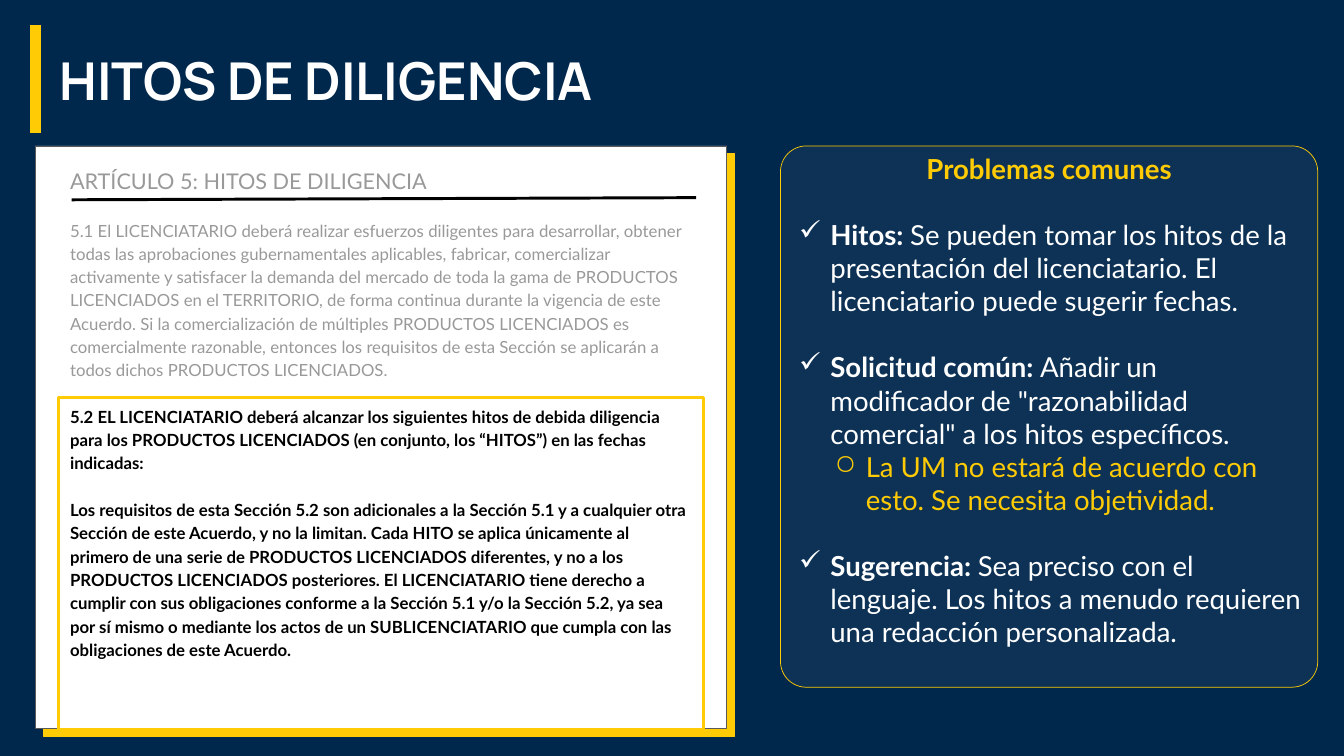
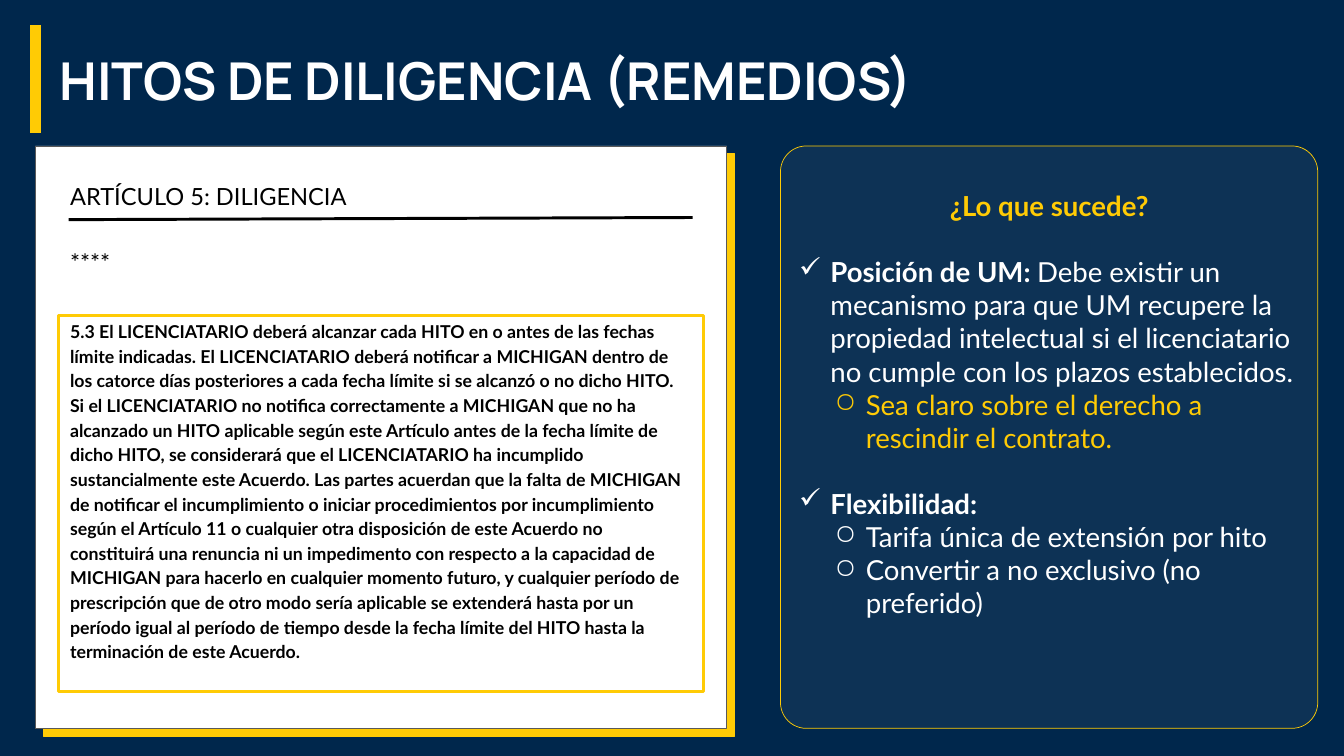
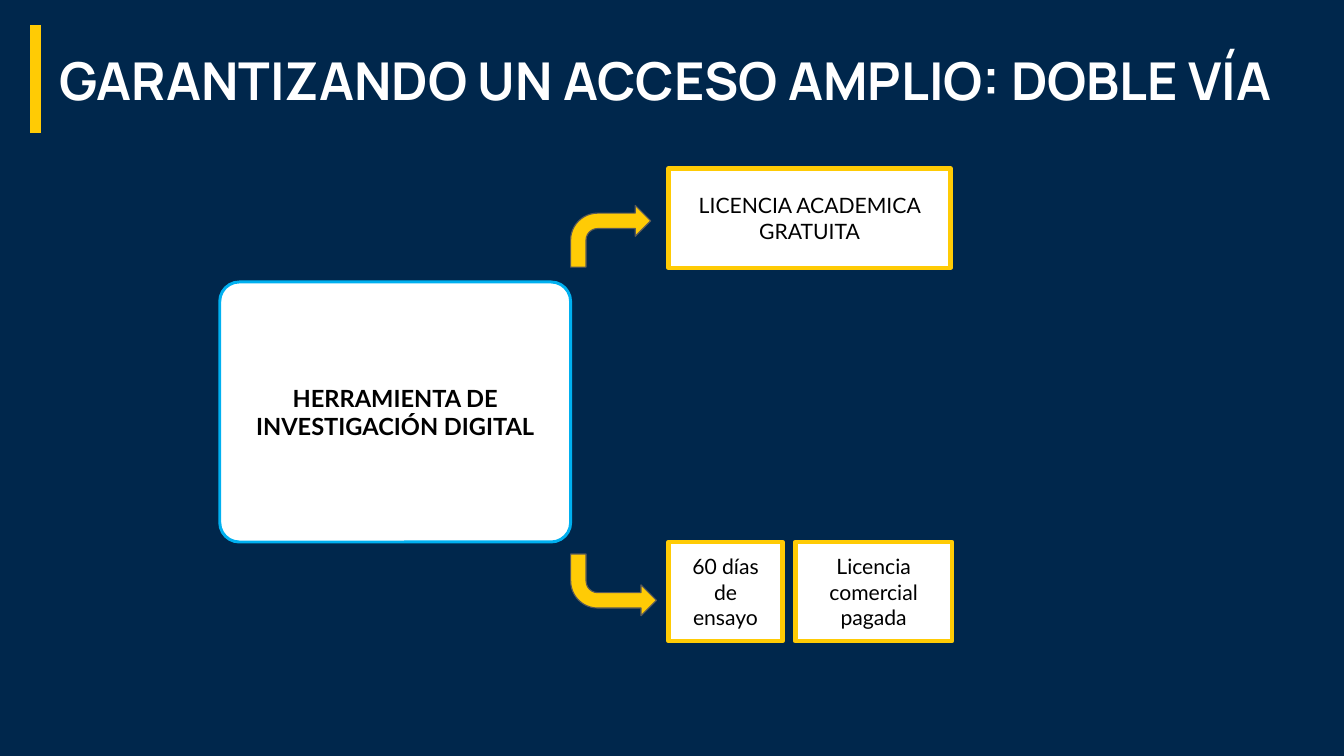
from lxml.etree import SubElement as Sub
from pptx import Presentation
from pptx.dml.color import RGBColor
from pptx.enum.shapes import MSO_CONNECTOR as Conn, MSO_SHAPE as Shape
from pptx.enum.text import MSO_ANCHOR as Anchor, PP_ALIGN as Align
from pptx.oxml.ns import qn
from pptx.util import Inches, Pt

NAVY, GOLD, WHITE, BLACK = "00274C", "FFCB05", "FFFFFF", "000000"
GRAY, EDGE, SKY = "999999", "595959", "00B0F0"
BODY, HEAD = "Lato", "Manrope"
LEAD = 1.2
LOOSE = 1.16
CARD = 28
LEFT, TOP, WIDE, TALL = 0.5, 2.06, 9.75, 8.22


def hue(code):
    """Turn a hex string into a colour."""
    return RGBColor.from_string(code)


def style(para, size, color, bold=None, face=BODY):
    """Set the font of a whole paragraph."""
    font = para.font
    font.name, font.size, font.bold = face, Pt(size), bold
    font.color.rgb = hue(color)


def inset(frame, pad, anchor=Anchor.TOP):
    """Wrap a text frame and give it even margins."""
    frame.word_wrap = True
    frame.vertical_anchor = anchor
    frame.margin_left = frame.margin_right = Inches(pad)
    frame.margin_top = frame.margin_bottom = Inches(pad)


def grow(frame, first):
    """Return the first paragraph, or add another."""
    return frame.paragraphs[0] if first else frame.add_paragraph()


def draw(slide, kind, at, fill, edge, width, adj=()):
    """Draw a flat preset shape with an outline."""
    shape = slide.shapes.add_shape(kind, *map(Inches, at))
    shape.shadow.inherit = False
    for i, value in enumerate(adj):
        shape.adjustments[i] = value
    if fill:
        shape.fill.solid()
        shape.fill.fore_color.rgb = hue(fill)
    else:
        shape.fill.background()
    shape.line.color.rgb = hue(edge)
    shape.line.width = Pt(width)
    return shape


def rule(slide, start, end, color, width):
    """Draw a straight line without a shadow."""
    ends = map(Inches, (*start, *end))
    line = slide.shapes.add_connector(Conn.STRAIGHT, *ends)
    line.line.color.rgb = hue(color)
    line.line.width = Pt(width)
    Sub(line._element.spPr, qn("a:effectLst"))


def base(deck, title):
    """Add a navy slide with its title and gold bar."""
    slide = deck.slides.add_slide(deck.slide_layouts[6])
    slide.background.fill.solid()
    slide.background.fill.fore_color.rgb = hue(NAVY)
    box = slide.shapes.add_textbox(*map(Inches, (0.65, 0.53, 17.67, 1.19)))
    inset(box.text_frame, 0.19, Anchor.MIDDLE)
    para = box.text_frame.paragraphs[0]
    para.text = title
    style(para, 53, WHITE, True, HEAD)
    rule(slide, (LEFT, 0.35), (LEFT, 1.88), GOLD, 12)
    return slide


def bullet(para, level, color):
    """Give a paragraph a hanging check or ring."""
    para.level = level
    props = para._p.get_or_add_pPr()
    props.set("marL", str(Inches(0.5 + 0.5 * level)))
    props.set("indent", str(Inches(-0.44)))
    Sub(Sub(props, qn("a:buClr")), qn("a:srgbClr"), val=color)
    Sub(props, qn("a:buChar"), char="✓○"[level])


def card(slide, tall, title, items, spare):
    """Add the tinted card with a heading and bullets."""
    shape = draw(slide, Shape.ROUNDED_RECTANGLE, (11.01, TOP, 7.58, tall),
                 WHITE, GOLD, 0.75, [0.048])
    tint = shape._element.spPr.find(qn("a:solidFill"))[0]
    Sub(tint, qn("a:alpha"), val="5000")
    frame = shape.text_frame
    inset(frame, 0.1, Anchor.MIDDLE)
    frame.margin_top = 0
    frame.margin_bottom = Pt(spare * CARD * LEAD)
    head = frame.paragraphs[0]
    head.text = title
    head.alignment = Align.CENTER
    style(head, CARD, GOLD, True)
    for level, color, lead, rest in items:
        para = frame.add_paragraph()
        para.alignment = Align.LEFT
        bullet(para, level, color)
        if level == 0:
            para.space_before = Pt(CARD * LEAD)
        style(para, CARD, color)
        for words, bold in ((lead, True), (rest, False)):
            if words:
                run = para.add_run()
                run.text, run.font.bold = words, bold


def sheet(slide, top, paras, line, frame):
    """Add the white page with its clauses, rule and gold frame."""
    page = draw(slide, Shape.RECTANGLE, (LEFT, TOP, WIDE, TALL),
                WHITE, EDGE, 0.75)
    glow = Sub(page._element.spPr.find(qn("a:effectLst")),
               qn("a:outerShdw"), dist=str(Pt(11.2)), dir="2700000",
               algn="bl", rotWithShape="0")
    Sub(glow, qn("a:srgbClr"), val=GOLD)
    box = slide.shapes.add_textbox(
        *map(Inches, (0.89, top, 8.96, 9.7 - top)))
    inset(box.text_frame, 0.1)
    for i, (words, size, color, bold, skip) in enumerate(paras):
        para = grow(box.text_frame, i == 0)
        para.text = words
        para.line_spacing = LOOSE
        if skip:
            para.space_before = Pt(round(skip * LEAD * LOOSE, 1))
        style(para, size, color, bold)
    rule(slide, *line, BLACK, 3)
    draw(slide, Shape.RECTANGLE, frame, None, GOLD, 3)


def label(shape, lines, size, pad, bold=None):
    """Centre black text in a shape."""
    inset(shape.text_frame, pad, Anchor.MIDDLE)
    for i, words in enumerate(lines):
        para = grow(shape.text_frame, i == 0)
        para.text = words
        para.alignment = Align.CENTER
        style(para, size, BLACK, bold)


def bend(slide, at):
    """Add a gold bent arrow."""
    return draw(slide, Shape.BENT_ARROW, at, GOLD, EDGE, 1.15,
                [0.25, 0.25, 0.25, 0.438])


def goals(deck):
    """Build the slide on milestones."""
    slide = base(deck, "HITOS DE DILIGENCIA")
    card(slide, 7.64, "Problemas comunes", [
        (0, WHITE, "Hitos: ", "Se pueden tomar los hitos de la presentación del licenciatario. El licenciatario puede sugerir fechas."),
        (0, WHITE, "Solicitud común: ", "Añadir un modificador de \"razonabilidad comercial\" a los hitos específicos."),
        (1, GOLD, "", "La UM no estará de acuerdo con esto. Se necesita objetividad."),
        (0, WHITE, "Sugerencia: ", "Sea preciso con el lenguaje. Los hitos a menudo requieren una redacción personalizada."),
    ], 1)
    sheet(slide, 2.21, [
        ("ARTÍCULO 5: HITOS DE DILIGENCIA", 22, GRAY, False, 0),
        ("5.1 El LICENCIATARIO deberá realizar esfuerzos diligentes para desarrollar, obtener todas las aprobaciones gubernamentales aplicables, fabricar, comercializar activamente y satisfacer la demanda del mercado de toda la gama de PRODUCTOS LICENCIADOS en el TERRITORIO, de forma continua durante la vigencia de este Acuerdo. Si la comercialización de múltiples PRODUCTOS LICENCIADOS es comercialmente razonable, entonces los requisitos de esta Sección se aplicarán a todos dichos PRODUCTOS LICENCIADOS.", 17, GRAY, False, 17),
        ("5.2 EL LICENCIATARIO deberá alcanzar los siguientes hitos de debida diligencia para los PRODUCTOS LICENCIADOS (en conjunto, los “HITOS”) en las fechas indicadas:", 17, BLACK, True, 17),
        ("Los requisitos de esta Sección 5.2 son adicionales a la Sección 5.1 y a cualquier otra Sección de este Acuerdo, y no la limitan. Cada HITO se aplica únicamente al primero de una serie de PRODUCTOS LICENCIADOS diferentes, y no a los PRODUCTOS LICENCIADOS posteriores. El LICENCIATARIO tiene derecho a cumplir con sus obligaciones conforme a la Sección 5.1 y/o la Sección 5.2, ya sea por sí mismo o mediante los actos de un SUBLICENCIATARIO que cumpla con las obligaciones de este Acuerdo.", 17, BLACK, True, 17),
    ], ((1.01, 2.82), (9.82, 2.79)), (0.82, 5.61, 9.11, 4.68))


def cures(deck):
    """Build the slide on remedies."""
    slide = base(deck, "HITOS DE DILIGENCIA (REMEDIOS)")
    card(slide, TALL, "¿Lo que sucede?", [
        (0, WHITE, "Posición de UM: ", "Debe existir un mecanismo para que UM recupere la propiedad intelectual si el licenciatario no cumple con los plazos establecidos."),
        (1, GOLD, "", "Sea claro sobre el derecho a rescindir el contrato."),
        (0, WHITE, "Flexibilidad:", ""),
        (1, WHITE, "", "Tarifa única de extensión por hito"),
        (1, WHITE, "", "Convertir a no exclusivo (no preferido)"),
    ], 2)
    clause = " ".join([
        "5.3 El LICENCIATARIO deberá alcanzar cada HITO en o antes de las fechas límite indicadas.",
        "El LICENCIATARIO deberá notificar a MICHIGAN dentro de los catorce días posteriores a cada fecha límite si se alcanzó o no dicho HITO.",
        "Si el LICENCIATARIO no notifica correctamente a MICHIGAN que no ha alcanzado un HITO aplicable según este Artículo antes de la fecha límite de dicho HITO, se considerará que el LICENCIATARIO ha incumplido sustancialmente este Acuerdo.",
        "Las partes acuerdan que la falta de MICHIGAN de notificar el incumplimiento o iniciar procedimientos por incumplimiento según el Artículo 11 o cualquier otra disposición de este Acuerdo no constituirá una renuncia ni un impedimento con respecto a la capacidad de MICHIGAN para hacerlo en cualquier momento futuro, y cualquier período de prescripción que de otro modo sería aplicable se extenderá hasta por un período igual al período de tiempo desde la fecha límite del HITO hasta la terminación de este Acuerdo.",
    ])
    sheet(slide, 2.41, [
        ("ARTÍCULO 5: DILIGENCIA", 24, BLACK, False, 0),
        ("****", 24, BLACK, False, 24),
        (clause, 18, BLACK, True, 30),
    ], ((0.97, 3.1), (9.77, 3.07)), (0.82, 4.45, 9.11, 5.31))


def routes(deck):
    """Build the slide on the two licence routes."""
    slide = base(deck, "GARANTIZANDO UN ACCESO AMPLIO: DOBLE VÍA")
    bend(slide, (8.05, 2.9, 1.13, 0.87))
    down = bend(slide, (8.05, 7.82, 1.21, 0.87))
    down.rotation = 180
    down._element.spPr.find(qn("a:xfrm")).set("flipH", "1")
    for left, top, wide, lines in (
        (9.43, 2.38, 3.98, ["LICENCIA ACADEMICA GRATUITA"]),
        (9.43, 7.65, 1.61, ["60 días", "de ensayo"]),
        (11.22, 7.65, 2.21, ["Licencia comercial pagada"]),
    ):
        box = draw(slide, Shape.RECTANGLE, (left, top, wide, 1.4),
                   WHITE, GOLD, 4.6)
        label(box, lines, 21.5, 0.15)
    tool = draw(slide, Shape.ROUNDED_RECTANGLE, (3.1, 3.98, 4.95, 3.67),
                WHITE, SKY, 3, [0.075])
    label(tool, ["HERRAMIENTA DE INVESTIGACIÓN DIGITAL"], 24, 0.1, True)


def main():
    """Build and save the deck."""
    deck = Presentation()
    deck.slide_width, deck.slide_height = Inches(18.96), Inches(10.67)
    for build in (goals, cures, routes):
        build(deck)
    deck.save("out.pptx")


if __name__ == "__main__":
    main()
